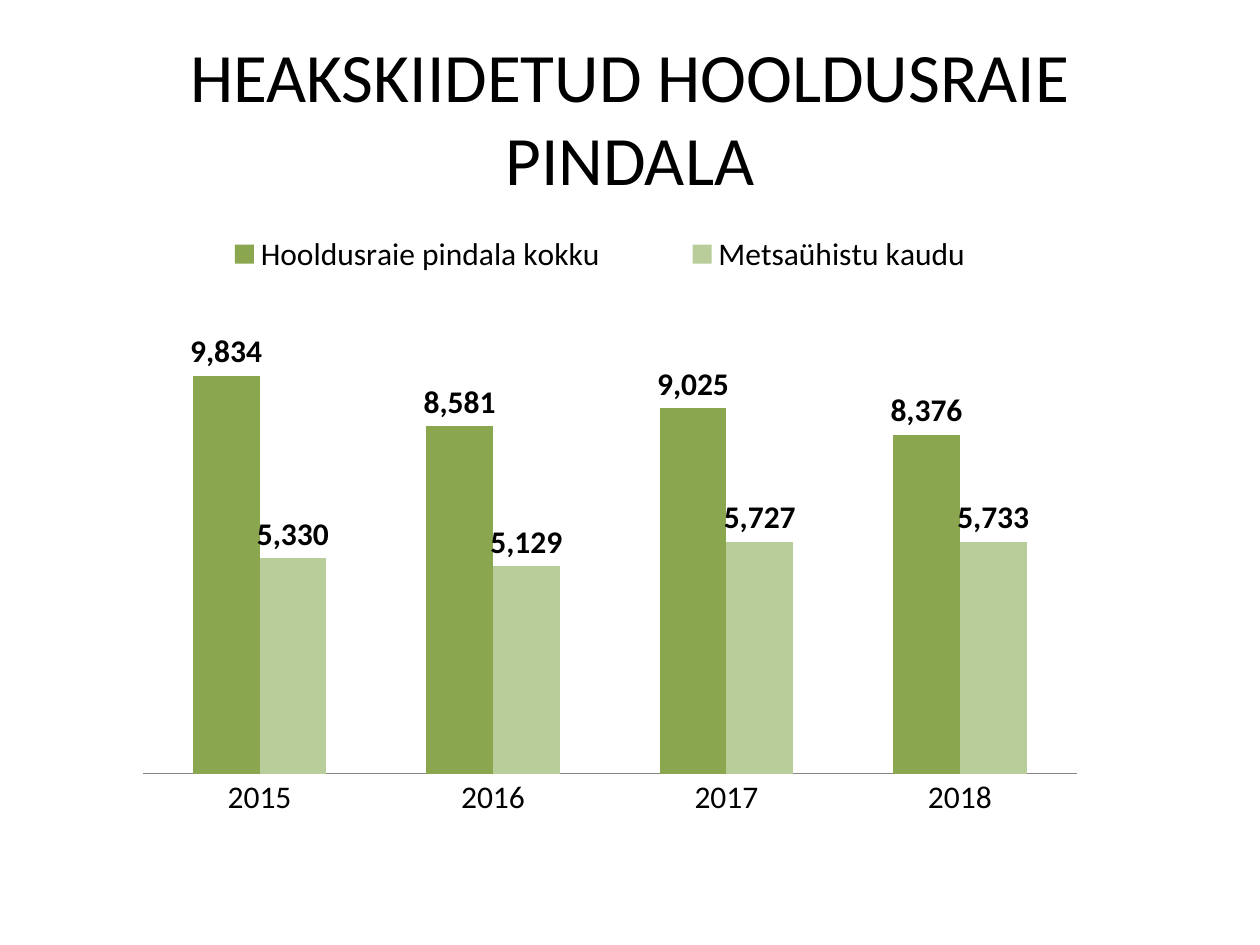
from dataclasses import dataclass
from typing import NamedTuple

from lxml.etree import SubElement
from pptx import Presentation
from pptx.chart.chart import Chart
from pptx.chart.data import CategoryChartData
from pptx.dml.color import RGBColor
from pptx.enum.chart import (XL_CHART_TYPE, XL_LABEL_POSITION,
                             XL_LEGEND_POSITION, XL_TICK_MARK)
from pptx.enum.text import MSO_ANCHOR, PP_ALIGN
from pptx.oxml.ns import qn
from pptx.slide import Slide
from pptx.util import Inches, Pt


@dataclass(frozen=True)
class Theme:
    font: str = "Calibri"
    text: RGBColor = RGBColor(0x00, 0x00, 0x00)
    axis: RGBColor = RGBColor(0x86, 0x86, 0x86)
    total: RGBColor = RGBColor(0x8A, 0xA6, 0x4F)
    association: RGBColor = RGBColor(0xB9, 0xCD, 0x9A)
    title_size: Pt = Pt(39.6)
    chart_size: Pt = Pt(18)


class AreaSeries(NamedTuple):
    name: str
    areas: tuple[int, ...]
    color: RGBColor


class Frame(NamedTuple):
    """Place within the chart, as fractions of its size."""
    x: float
    y: float
    w: float
    h: float


THEME = Theme()
TITLE = "HEAKSKIIDETUD HOOLDUSRAIE PINDALA"
YEARS = ("2015", "2016", "2017", "2018")
AREA_SERIES = (
    AreaSeries("Hooldusraie pindala kokku", (9834, 8581, 9025, 8376), THEME.total),
    AreaSeries("Metsaühistu kaudu", (5330, 5129, 5727, 5733), THEME.association),
)
PLOT_FRAME = Frame(0.02, 0.12, 0.96, 0.79)
LEGEND_FRAME = Frame(0.03, 0.03, 0.92, 0.07)


def add_title(slide: Slide) -> None:
    frame = slide.shapes.add_textbox(
        Inches(0.5), Inches(0.3), Inches(9), Inches(1.25)).text_frame
    frame.word_wrap = True
    frame.vertical_anchor = MSO_ANCHOR.MIDDLE
    heading = frame.paragraphs[0]
    heading.alignment = PP_ALIGN.CENTER
    run = heading.add_run()
    run.text = TITLE
    run.font.name = THEME.font
    run.font.size = THEME.title_size
    run.font.color.rgb = THEME.text


def place(part, frame: Frame, index: int, inner: bool = False) -> None:
    """Give a plot area or legend element a fixed layout as its child at index."""
    for automatic in part.findall(qn("c:layout")):
        part.remove(automatic)
    layout = SubElement(part, qn("c:layout"))
    part.insert(index, layout)
    manual = SubElement(layout, qn("c:manualLayout"))
    settings = [("layoutTarget", "inner")] if inner else []
    settings += [("xMode", "edge"), ("yMode", "edge")]
    settings += [(key, str(value)) for key, value in frame._asdict().items()]
    for tag, value in settings:
        SubElement(manual, qn(f"c:{tag}")).set("val", value)


def style_axes(chart: Chart) -> None:
    years = chart.category_axis
    years.major_tick_mark = years.minor_tick_mark = XL_TICK_MARK.NONE
    years.has_major_gridlines = False
    years.format.line.color.rgb = THEME.axis
    years.format.line.width = Pt(0.75)
    areas = chart.value_axis
    areas.minimum_scale, areas.maximum_scale = 0, 12000
    areas.has_major_gridlines = False
    areas.visible = False


def style_series(chart: Chart) -> None:
    plot = chart.plots[0]
    plot.gap_width, plot.overlap = 150, 0
    plot.vary_by_categories = False
    for bars, area in zip(plot.series, AREA_SERIES):
        bars.format.fill.solid()
        bars.format.fill.fore_color.rgb = area.color
        labels = bars.data_labels
        labels.show_value = True
        labels.number_format = "#,##0"
        labels.number_format_is_linked = False
        labels.position = XL_LABEL_POSITION.OUTSIDE_END
        labels.font.bold = True
        labels.font.name = THEME.font
        labels.font.size = THEME.chart_size
        labels.font.color.rgb = THEME.text


def add_area_chart(slide: Slide) -> None:
    data = CategoryChartData(number_format="#,##0")
    data.categories = YEARS
    for area in AREA_SERIES:
        data.add_series(area.name, area.areas)
    chart = slide.shapes.add_chart(
        XL_CHART_TYPE.COLUMN_CLUSTERED, Inches(0.98), Inches(1.7),
        Inches(7.72), Inches(4.88), data).chart
    chart.has_title = False
    chart.font.name = THEME.font
    chart.font.size = THEME.chart_size
    chart.font.color.rgb = THEME.text
    chart.has_legend = True
    chart.legend.position = XL_LEGEND_POSITION.TOP
    chart.legend.include_in_layout = False
    style_axes(chart)
    style_series(chart)
    chart_root = chart.element
    place(chart_root.find(".//" + qn("c:plotArea")), PLOT_FRAME, 0, inner=True)
    place(chart_root.find(".//" + qn("c:legend")), LEGEND_FRAME, 1)


def main() -> None:
    deck = Presentation()
    deck.slide_width, deck.slide_height = Inches(10), Inches(7.5)
    slide = deck.slides.add_slide(deck.slide_layouts[6])
    add_title(slide)
    add_area_chart(slide)
    deck.save("out.pptx")


if __name__ == "__main__":
    main()
